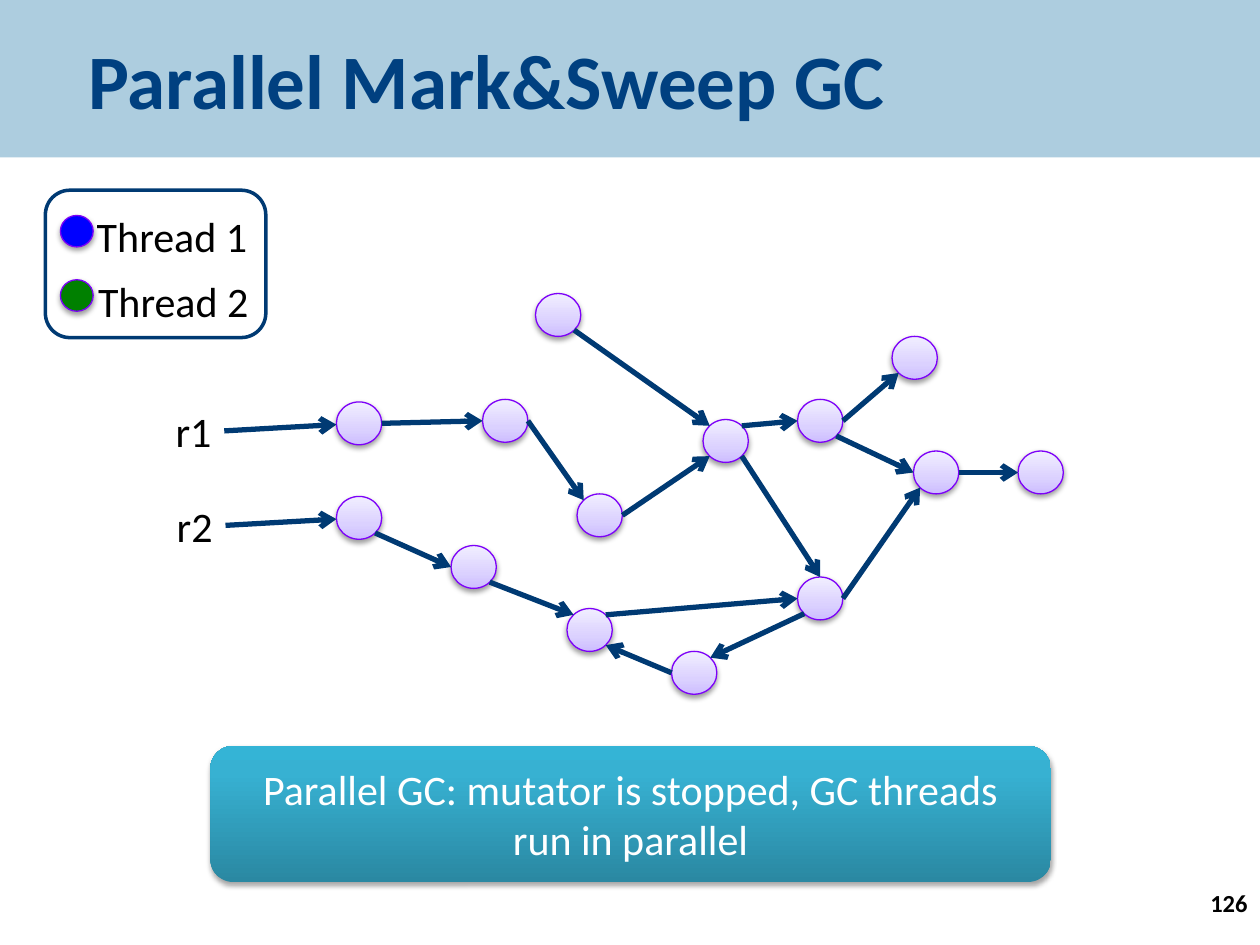
from math import sqrt
from lxml.etree import SubElement
from pptx import Presentation
from pptx.dml.color import RGBColor
from pptx.enum.shapes import MSO_CONNECTOR, MSO_SHAPE
from pptx.enum.text import MSO_ANCHOR, PP_ALIGN
from pptx.oxml.ns import qn
from pptx.util import Inches, Pt

BLACK = RGBColor(0x00, 0x00, 0x00)
WHITE = RGBColor(0xFF, 0xFF, 0xFF)
BAND = RGBColor(0xAD, 0xCD, 0xDF)
TITLE = RGBColor(0x00, 0x40, 0x80)
NAVY = RGBColor(0x00, 0x3A, 0x73)
PURPLE = RGBColor(0x7D, 0x00, 0xF9)
BLUE = RGBColor(0x00, 0x00, 0xFF)
GREEN = RGBColor(0x00, 0x80, 0x00)
LILAC_STOPS = [(0, RGBColor(0xCD, 0xBD, 0xFF)), (35, RGBColor(0xDB, 0xD1, 0xFF)),
               (100, RGBColor(0xF1, 0xEE, 0xFF))]
TEAL_STOPS = [(0, RGBColor(0x2A, 0x88, 0xA2)), (80, RGBColor(0x37, 0xB1, 0xD2)),
              (100, RGBColor(0x34, 0xB4, 0xD6))]


def paint(shape, fill, opacity, distance):
    """Fill with one colour or a list of upward gradient stops, and add a soft shadow."""
    if isinstance(fill, list):
        shape.fill.gradient()
        shape.fill.gradient_angle = 90
        stops = shape._element.spPr.find(qn("a:gradFill")).find(qn("a:gsLst"))
        stops.clear()
        for percent, color in fill:
            stop = SubElement(stops, qn("a:gs"), pos=str(percent * 1000))
            SubElement(stop, qn("a:srgbClr"), val=str(color))
    else:
        shape.fill.solid()
        shape.fill.fore_color.rgb = fill
    shape.shadow.inherit = False
    effects = shape._element.spPr.find(qn("a:effectLst"))
    shadow = SubElement(effects, qn("a:outerShdw"), blurRad=str(Pt(3.1)),
                        dist=str(Pt(distance)), dir="5400000", rotWithShape="0")
    shadow_color = SubElement(shadow, qn("a:srgbClr"), val=str(BLACK))
    SubElement(shadow_color, qn("a:alpha"), val=str(opacity * 1000))


def write(shape, text, color, align, wrap=True, **font_format):
    """Put one formatted paragraph into a shape."""
    shape.text_frame.word_wrap = wrap
    paragraph = shape.text_frame.paragraphs[0]
    paragraph.alignment = align
    run = paragraph.add_run()
    run.text = text
    run.font.color.rgb = color
    for name, value in ({"name": "Calibri", "size": Pt(24)} | font_format).items():
        setattr(run.font, name, value)


prs = Presentation()
prs.slide_width, prs.slide_height = Inches(10), Inches(7.5)
slide = prs.slides.add_slide(prs.slide_layouts[6])
shapes = slide.shapes

# Title band
title = shapes.add_shape(MSO_SHAPE.RECTANGLE, 0, 0, Inches(10), Inches(1.25))
title.fill.solid()
title.fill.fore_color.rgb = BAND
title.line.fill.background()
title.shadow.inherit = False
title.text_frame.margin_left = Inches(0.7)
title.text_frame.vertical_anchor = MSO_ANCHOR.MIDDLE
write(title, "Parallel Mark&Sweep GC", TITLE, PP_ALIGN.LEFT, size=Pt(44), bold=True)

# Heap objects (left, top) and legend dots
NODE_W, NODE_H = 0.36, 0.34
nodes = {
    "a1": (2.67, 3.19), "a2": (3.83, 3.17), "a3": (4.58, 3.92),
    "b1": (2.67, 3.94), "b2": (3.58, 4.33), "b3": (4.5, 4.83), "b4": (5.33, 5.17),
    "free": (4.25, 2.33), "hub": (5.58, 3.33), "low": (6.33, 4.58),
    "c1": (6.33, 3.17), "c2": (7.08, 2.67), "c3": (7.25, 3.58), "c4": (8.08, 3.58),
}
circles = [(x, y, NODE_W, NODE_H, LILAC_STOPS) for x, y in nodes.values()]
circles += [(0.48, 1.71, 0.26, 0.25, BLUE), (0.48, 2.22, 0.26, 0.25, GREEN)]
for x, y, width, height, fill in circles:
    circle = shapes.add_shape(MSO_SHAPE.OVAL, Inches(x), Inches(y),
                              Inches(width), Inches(height))
    paint(circle, fill, 38, 1.6)
    circle.line.color.rgb = PURPLE
    circle.line.width = Pt(0.75)

# References: each end is a node and a compass point on its rim
D = sqrt(0.5)
rim = {"n": (0, -1), "e": (1, 0), "w": (-1, 0),
       "ne": (D, -D), "se": (D, D), "sw": (-D, D), "nw": (-D, -D)}
references = [
    ("a1", "e", "a2", "w"), ("a2", "e", "a3", "nw"), ("a3", "e", "hub", "sw"),
    ("free", "se", "hub", "nw"), ("hub", "ne", "c1", "w"), ("hub", "se", "low", "n"),
    ("b1", "se", "b2", "w"), ("b2", "se", "b3", "nw"), ("b3", "ne", "low", "w"),
    ("low", "sw", "b4", "ne"), ("b4", "w", "b3", "se"), ("low", "e", "c3", "sw"),
    ("c1", "e", "c2", "sw"), ("c1", "se", "c3", "w"), ("c3", "e", "c4", "w"),
]
arrows = [((1.78, 3.42), (2.67, 3.37)), ((1.79, 4.17), (2.67, 4.12))]  # from the roots
for source, source_side, target, target_side in references:
    arrows.append([
        (nodes[node][0] + NODE_W / 2 * (1 + rim[side][0]),
         nodes[node][1] + NODE_H / 2 * (1 + rim[side][1]))
        for node, side in ((source, source_side), (target, target_side))
    ])
for start, end in arrows:
    arrow = shapes.add_connector(MSO_CONNECTOR.STRAIGHT,
                                 *(Inches(value) for value in (*start, *end)))
    arrow.line.color.rgb = NAVY
    arrow.line.width = Pt(3)
    SubElement(arrow.line._get_or_add_ln(), qn("a:tailEnd"), type="arrow")
    SubElement(arrow._element.spPr, qn("a:effectLst"))

# Root and thread labels
for text, x, y, width in [("r1", 1.29, 3.17, 0.49), ("r2", 1.3, 3.92, 0.49),
                          ("Thread 1", 0.66, 1.62, 1.41), ("Thread 2", 0.67, 2.14, 1.41)]:
    label = shapes.add_textbox(Inches(x), Inches(y), Inches(width), Inches(0.5))
    write(label, text, BLACK, PP_ALIGN.CENTER, wrap=False)

# Legend frame
legend = shapes.add_shape(MSO_SHAPE.ROUNDED_RECTANGLE, Inches(0.36), Inches(1.51),
                          Inches(1.75), Inches(1.17))
legend.fill.background()
legend.line.color.rgb = NAVY
legend.line.width = Pt(2)
legend.shadow.inherit = False

# Summary banner
banner = shapes.add_shape(MSO_SHAPE.ROUNDED_RECTANGLE, Inches(1.67), Inches(5.92),
                          Inches(6.67), Inches(1.08))
paint(banner, TEAL_STOPS, 35, 1.8)
banner.line.fill.background()
banner.text_frame.vertical_anchor = MSO_ANCHOR.MIDDLE
write(banner, "Parallel GC: mutator is stopped, GC threads run in parallel",
      WHITE, PP_ALIGN.CENTER)

# Page number
page_number = shapes.add_textbox(Inches(7.92), Inches(7), Inches(2.08), Inches(0.5))
write(page_number, "126", BLACK, PP_ALIGN.RIGHT, size=Pt(14), bold=True)

prs.save("out.pptx")
